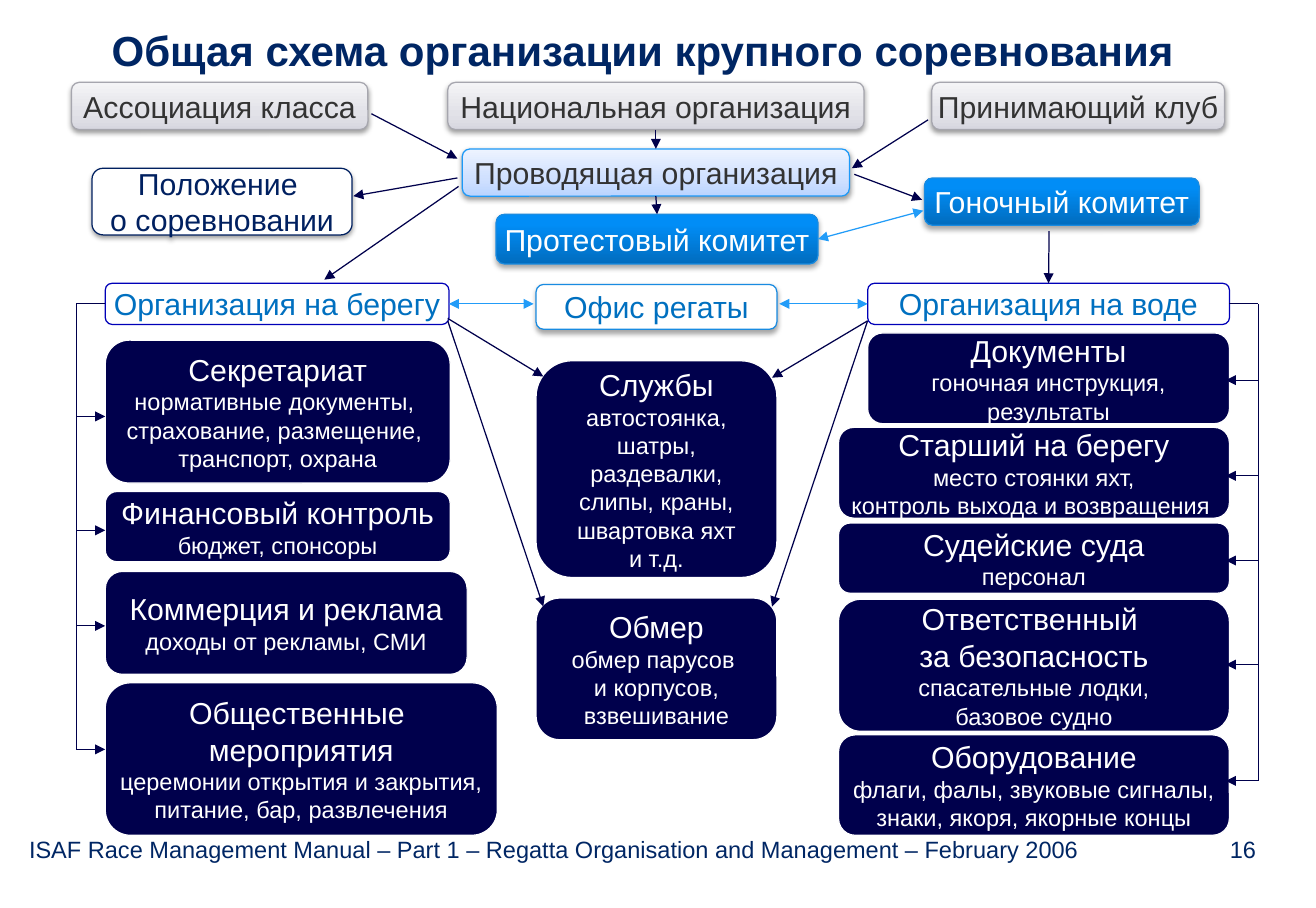
from copy import deepcopy

from lxml.etree import SubElement
from pptx import Presentation
from pptx.dml.color import RGBColor
from pptx.enum.shapes import MSO_CONNECTOR as Link, MSO_SHAPE as Preset
from pptx.enum.text import MSO_ANCHOR as Anchor, MSO_AUTO_SIZE as AutoSize, PP_ALIGN as Align
from pptx.oxml.ns import qn
from pptx.util import Emu, Pt

PX = 9144
SLIDE_WIDTH, SLIDE_HEIGHT = 1087.5, 750
FONT = "Arial"
NAVY, SKY, INK = "00004C", "229CF8", "002664"
TOP, LEFT, BOTTOM, RIGHT = range(4)

TITLE = "Общая схема организации крупного соревнования"
FOOTER = "ISAF Race Management Manual – Part 1 – Regatta Organisation and Management – February 2006\t16"
TITLE_AREA = (55, 15, 952, 52)
FOOTER_AREA = (24, 690, 1024, 23)
PAGE_TAB = 1014

GREY_FADE = [(0, "D7D7E0"), (0.35, "E2E2E8"), (1, "F4F4F6")]
PALE_FADE = [(0, "BAD4FF"), (0.35, "CFE0FF"), (1, "EDF3FF")]
BLUE_FADE = [(0, "016CBE"), (0.8, "018DF6"), (1, "008DF8")]

# fill, line, text, (shadow opacity %, shadow distance pt)
STYLES = {
    "founder": (GREY_FADE, "A6A6AE", "333333", (38, 1.6)),
    "organiser": (PALE_FADE, "1C99F8", "333333", (38, 1.6)),
    "committee": (BLUE_FADE, "198BE1", "FFFFFF", (35, 1.8)),
    "notice": ("FFFFFF", "002060", "002060", (38, 1.6)),
    "office": ("FFFFFF", "198BE1", "0070C0", (35, 1.8)),
    "branch": (None, "0000B8", "0070C0", None),
    "duty": (NAVY, "FFFFFF", "FFFFFF", None),
}

BOXES = {
    "class": ("founder", (59, 68, 245, 39), "Ассоциация класса", ""),
    "national": ("founder", (370, 68, 344, 39), "Национальная организация", ""),
    "club": ("founder", (770, 68, 242, 39), "Принимающий клуб", ""),
    "organiser": ("organiser", (382, 123, 320, 39), "Проводящая организация", ""),
    "notice": ("notice", (76, 139, 215, 55), "Положение \vо соревновании", ""),
    "protest": ("committee", (410, 177, 266, 41), "Протестовый комитет", ""),
    "race": ("committee", (764, 147, 227, 39), "Гоночный комитет", ""),
    "shore": ("branch", (87, 234, 284, 34), "Организация на берегу", ""),
    "office": ("office", (443, 235, 199, 37), "Офис регаты", ""),
    "water": ("branch", (717, 234, 299, 34), "Организация на воде", ""),
    "secretary": ("duty", (87, 281, 285, 118), "Секретариат",
                  "нормативные документы, \vстрахование, размещение, \vтранспорт, охрана"),
    "finance": ("duty", (87, 406, 285, 58), "Финансовый контроль", "бюджет, спонсоры"),
    "commerce": ("duty", (87, 472, 299, 85), "Коммерция и реклама", "доходы от рекламы, СМИ"),
    "social": ("duty", (87, 564, 324, 126), "Общественные \vмероприятия",
               "церемонии открытия и закрытия,\nпитание, бар, развлечения"),
    "services": ("duty", (443, 298, 199, 179), "Службы",
                 "автостоянка,\nшатры,\nраздевалки,\nслипы, краны,\nшвартовка яхт\nи т.д."),
    "measuring": ("duty", (443, 494, 199, 117), "Обмер",
                  "обмер парусов \vи корпусов,\nвзвешивание"),
    "documents": ("duty", (717, 275, 299, 75), "Документы", "гоночная инструкция,\nрезультаты"),
    "beachmaster": ("duty", (693, 353, 323, 75), "Старший на берегу",
                    "место стоянки яхт,\nконтроль выхода и возвращения "),
    "boats": ("duty", (693, 432, 323, 58), "Судейские суда", "персонал"),
    "safety": ("duty", (693, 495, 323, 109), "Ответственный \vза безопасность",
               "спасательные лодки,\nбазовое судно"),
    "equipment": ("duty", (693, 607, 323, 83), "Оборудование",
                  "флаги, фалы, звуковые сигналы,\nзнаки, якоря, якорные концы"),
}

ARROWS = [
    ((307, 94), (378, 131)),
    (("national", BOTTOM), ("organiser", TOP)),
    ((767, 99), (704, 139)),
    ((378, 147), (292, 162)),
    ((379, 154), (268, 231)),
    (("organiser", BOTTOM), ("protest", TOP)),
    ((706, 144), (762, 165)),
    ((867, 191), ("water", TOP)),
    ((717, 265), (638, 312)),
    ((370, 263), (449, 311)),
    ((717, 265), (638, 501)),
    ((370, 265), (449, 501)),
]
EXCHANGES = [
    (("protest", RIGHT), (763, 174)),
    (("shore", RIGHT), (441, 251)),
    (("water", LEFT), (644, 251)),
]
TRUNKS = [
    ("shore", LEFT, 63, 87, [344, 438, 517, 619]),
    ("water", RIGHT, 1040, 1013, [314, 393, 463, 549, 645]),
]


def color(value):
    return RGBColor.from_string(value)


def emu(lengths):
    return [Emu(round(length * PX)) for length in lengths]


def style_runs(paragraph, size, ink, bold=False):
    for run in paragraph.runs:
        run.font.name, run.font.size, run.font.bold = FONT, Pt(size), bold
        run.font.color.rgb = color(ink)


def paint(shape, fill):
    if fill is None:
        shape.fill.background()
    elif isinstance(fill, str):
        shape.fill.solid()
        shape.fill.fore_color.rgb = color(fill)
    else:
        shape.fill.gradient()
        shape.fill.gradient_angle = 90
        stop_list = next(shape.element.iter(qn("a:gsLst")))
        stop_list.append(deepcopy(stop_list[0]))
        for stop, (position, tone) in zip(shape.fill.gradient_stops, fill):
            stop.position = position
            stop.color.rgb = color(tone)


def cast_shadow(shape, opacity, distance):
    effects = shape.element.spPr.find(qn("a:effectLst"))
    shadow = SubElement(effects, qn("a:outerShdw"), blurRad=str(Pt(3.1)), dist=str(Pt(distance)),
                        dir="5400000", rotWithShape="0")
    tone = SubElement(shadow, qn("a:srgbClr"), val="000000")
    SubElement(tone, qn("a:alpha"), val=str(opacity * 1000))


def add_box(slide, style, area, heading, details):
    fill, edge, ink, shadow = STYLES[style]
    box = slide.shapes.add_shape(Preset.FLOWCHART_ALTERNATE_PROCESS, *emu(area))
    paint(box, fill)
    box.line.color.rgb = color(edge)
    box.line.width = Pt(0.75)
    box.shadow.inherit = False
    if shadow:
        cast_shadow(box, *shadow)
    frame = box.text_frame
    frame.word_wrap = False
    frame.vertical_anchor = Anchor.MIDDLE
    frame.text = f"{heading}\n{details}" if details else heading
    for index, paragraph in enumerate(frame.paragraphs):
        paragraph.alignment = Align.CENTER
        style_runs(paragraph, 14 if index else 18, ink)
    return box


def add_link(slide, boxes, start, end, tone=NAVY, heads=("tailEnd",)):
    joined = [isinstance(point[0], str) for point in (start, end)]
    spots = [(0, 0) if join else point for join, point in zip(joined, (start, end))]
    link = slide.shapes.add_connector(Link.STRAIGHT, *emu(spots[0] + spots[1]))
    for join, point, attach in zip(joined, (start, end), (link.begin_connect, link.end_connect)):
        if join:
            attach(boxes[point[0]], point[1])
    link.line.color.rgb = color(tone)
    link.line.width = Pt(0.75)
    properties = link.element.spPr
    for head in heads:
        SubElement(properties.find(qn("a:ln")), qn(f"a:{head}"), type="triangle")
    SubElement(properties, qn("a:effectLst"))


def middle(name):
    _, top, _, height = BOXES[name][1]
    return top + height / 2


def add_title(slide):
    title = slide.shapes.title
    title.left, title.top, title.width, title.height = emu(TITLE_AREA)
    frame = title.text_frame
    frame.text = TITLE
    frame.auto_size = AutoSize.NONE
    frame.vertical_anchor = Anchor.MIDDLE
    frame.paragraphs[0].alignment = Align.CENTER
    style_runs(frame.paragraphs[0], 25, INK, bold=True)


def add_footer(slide):
    frame = slide.shapes.add_textbox(*emu(FOOTER_AREA)).text_frame
    frame.word_wrap = True
    frame.margin_left = frame.margin_right = frame.margin_top = frame.margin_bottom = 0
    paragraph = frame.paragraphs[0]
    paragraph.text = FOOTER
    paragraph.alignment = Align.LEFT
    tabs = SubElement(paragraph._p.get_or_add_pPr(), qn("a:tabLst"))
    SubElement(tabs, qn("a:tab"), pos=str(PAGE_TAB * PX), algn="r")
    style_runs(paragraph, 14, INK)


def main():
    deck = Presentation()
    deck.slide_width = Emu(round(SLIDE_WIDTH * PX))
    deck.slide_height = Emu(SLIDE_HEIGHT * PX)
    slide = deck.slides.add_slide(deck.slide_layouts[5])
    add_title(slide)
    add_footer(slide)
    boxes = {name: add_box(slide, *content) for name, content in BOXES.items()}
    for start, end in ARROWS:
        add_link(slide, boxes, start, end)
    for start, end in EXCHANGES:
        add_link(slide, boxes, start, end, SKY, ("headEnd", "tailEnd"))
    for root, side, trunk, tip, levels in TRUNKS:
        add_link(slide, boxes, (root, side), (trunk, middle(root)), heads=())
        add_link(slide, boxes, (trunk, middle(root)), (trunk, levels[-1]), heads=())
        for level in levels:
            add_link(slide, boxes, (trunk, level), (tip, level))
    deck.save("out.pptx")


if __name__ == "__main__":
    main()
